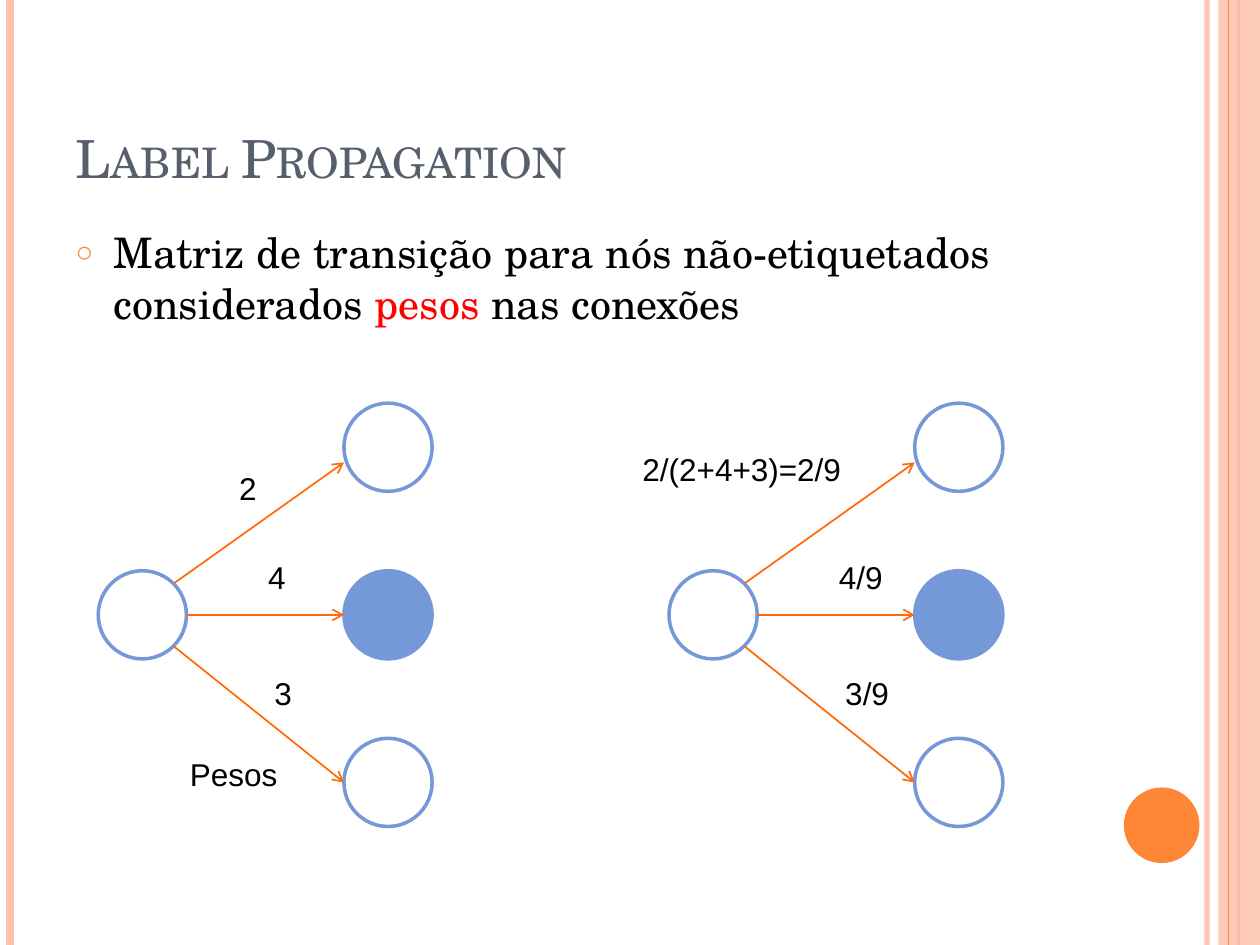
from lxml.etree import SubElement as Sub
from pptx import Presentation
from pptx.dml.color import RGBColor as RGB
from pptx.enum.shapes import MSO_CONNECTOR as Conn, MSO_SHAPE as Form
from pptx.enum.text import MSO_ANCHOR as Anchor, MSO_AUTO_SIZE as Fit, PP_ALIGN as Align
from pptx.oxml.ns import qn
from pptx.util import Inches, Pt

PINK = RGB(0xFE, 0xC3, 0xAE)
ORANGE = RGB(0xFE, 0x86, 0x37)
ARROW = RGB(0xFF, 0x6B, 0x0A)
BLUE = RGB(0x75, 0x98, 0xD9)
SLATE = RGB(0x57, 0x5F, 0x6D)
BLACK = RGB(0, 0, 0)
RED = RGB(0xFF, 0, 0)
SERIF = "TeX Gyre Schola"
SANS = "Arial"
SIZE = 0.7


def style(font, name, size, color):
    font.name = name
    font.size = Pt(size)
    font.color.rgb = color


def fade(fill, share):
    color = fill._xPr.find(".//" + qn("a:srgbClr"))
    Sub(color, qn("a:alpha"), val=str(share * 1000))


class Page:
    def __init__(self, slide):
        self.slide = slide
        self.shapes = slide.shapes

    def line(self, start, end, color, width, arrow=False, share=100):
        ends = [Inches(v) for v in (*start, *end)]
        line = self.shapes.add_connector(Conn.STRAIGHT, *ends)
        line.line.color.rgb = color
        line.line.width = Pt(width)
        if share < 100:
            fade(line.line.fill, share)
        if arrow:
            Sub(line.line._get_or_add_ln(), qn("a:tailEnd"), type="arrow")
        Sub(line._element.spPr, qn("a:effectLst"))

    def shape(self, form, box, fill=None, edge=None):
        shape = self.shapes.add_shape(form, *[Inches(v) for v in box])
        shape.shadow.inherit = False
        if fill is None:
            shape.fill.background()
        else:
            shape.fill.solid()
            shape.fill.fore_color.rgb = fill
        if edge is None:
            shape.line.fill.background()
        else:
            shape.line.color.rgb = edge
            shape.line.width = Pt(2)
        return shape

    def node(self, left, top, fill=None):
        self.shape(Form.OVAL, (left, top, SIZE, SIZE), fill, BLUE)

    def label(self, text, left, top, width):
        box = self.shapes.add_textbox(*[Inches(v) for v in (left, top, width, 0.4)])
        frame = box.text_frame
        frame.word_wrap = False
        frame.auto_size = Fit.SHAPE_TO_FIT_TEXT
        para = frame.paragraphs[0]
        para.text = text
        style(para.font, SANS, 18, BLACK)

    def holder(self, index, box, anchor):
        shape = self.slide.placeholders[index]
        shape.left, shape.top, shape.width, shape.height = [Inches(v) for v in box]
        frame = shape.text_frame
        frame.word_wrap = True
        frame.auto_size = Fit.NONE
        frame.vertical_anchor = anchor
        para = frame.paragraphs[0]
        para.alignment = Align.LEFT
        para.space_before = Pt(0)
        return para

    def title(self, text):
        para = self.holder(0, (0.5, 0.3, 8.17, 1.25), Anchor.BOTTOM)
        run = para.add_run()
        run.text = text
        run._r.get_or_add_rPr().set("cap", "small")
        style(para.font, SERIF, 30, SLATE)

    def bullet(self, parts):
        para = self.holder(1, (0.5, 1.75, 8.17, 5.33), Anchor.TOP)
        props = para._p.get_or_add_pPr()
        props.set("marL", str(Inches(0.3)))
        props.set("indent", str(Inches(-0.3)))
        Sub(Sub(props, qn("a:buClr")), qn("a:srgbClr"), val=str(ORANGE))
        Sub(props, qn("a:buSzPct"), val="70000")
        Sub(props, qn("a:buChar"), char="○")
        for text, color in parts:
            run = para.add_run()
            run.text = text
            run.font.color.rgb = color
        para.font.name = SERIF
        para.font.size = Pt(24)

    def frame(self):
        self.line((9.58, 0), (9.58, 7.5), PINK, 3, share=93)
        self.line((0.08, 0), (0.08, 7.5), PINK, 4.5)
        self.line((9.83, 0), (9.83, 7.5), ORANGE, 1.5)
        bar = self.shape(Form.RECTANGLE, (9.67, 0, 0.33, 7.5), PINK)
        fade(bar.fill, 87)
        self.line((9.75, 0), (9.75, 7.5), ORANGE, 0.75)
        self.shape(Form.OVAL, (8.92, 6.25, 0.6, 0.6), ORANGE)

    def graph(self, left, labels):
        far = left + 1.95
        self.node(left, 4.53)
        for top, fill in ((3.2, None), (4.53, BLUE), (5.86, None)):
            self.node(far, top, fill)
        for out, start, end in ((0.6, 4.63, 3.67), (SIZE, 4.88, 4.88), (0.6, 5.13, 6.21)):
            self.line((left + out, start), (far, end), ARROW, 1, arrow=True)
        for label in labels:
            self.label(*label)


def main():
    deck = Presentation()
    deck.slide_width, deck.slide_height = Inches(10), Inches(7.5)
    page = Page(deck.slides.add_slide(deck.slide_layouts[1]))
    page.frame()
    page.title("Label Propagation")
    page.bullet((
        ("Matriz de transição para nós não-etiquetados considerados ", BLACK),
        ("pesos", RED),
        (" nas conexões", BLACK),
    ))
    page.graph(0.78, (
        ("2", 1.8, 3.67, 0.34),
        ("4", 2.03, 4.38, 0.34),
        ("3", 2.08, 5.3, 0.34),
        ("Pesos", 1.41, 5.94, 0.9),
    ))
    page.graph(5.31, (
        ("2/(2+4+3)=2/9", 5, 3.52, 1.79),
        ("4/9", 6.56, 4.38, 0.55),
        ("3/9", 6.61, 5.3, 0.55),
    ))
    deck.save("out.pptx")


if __name__ == "__main__":
    main()
